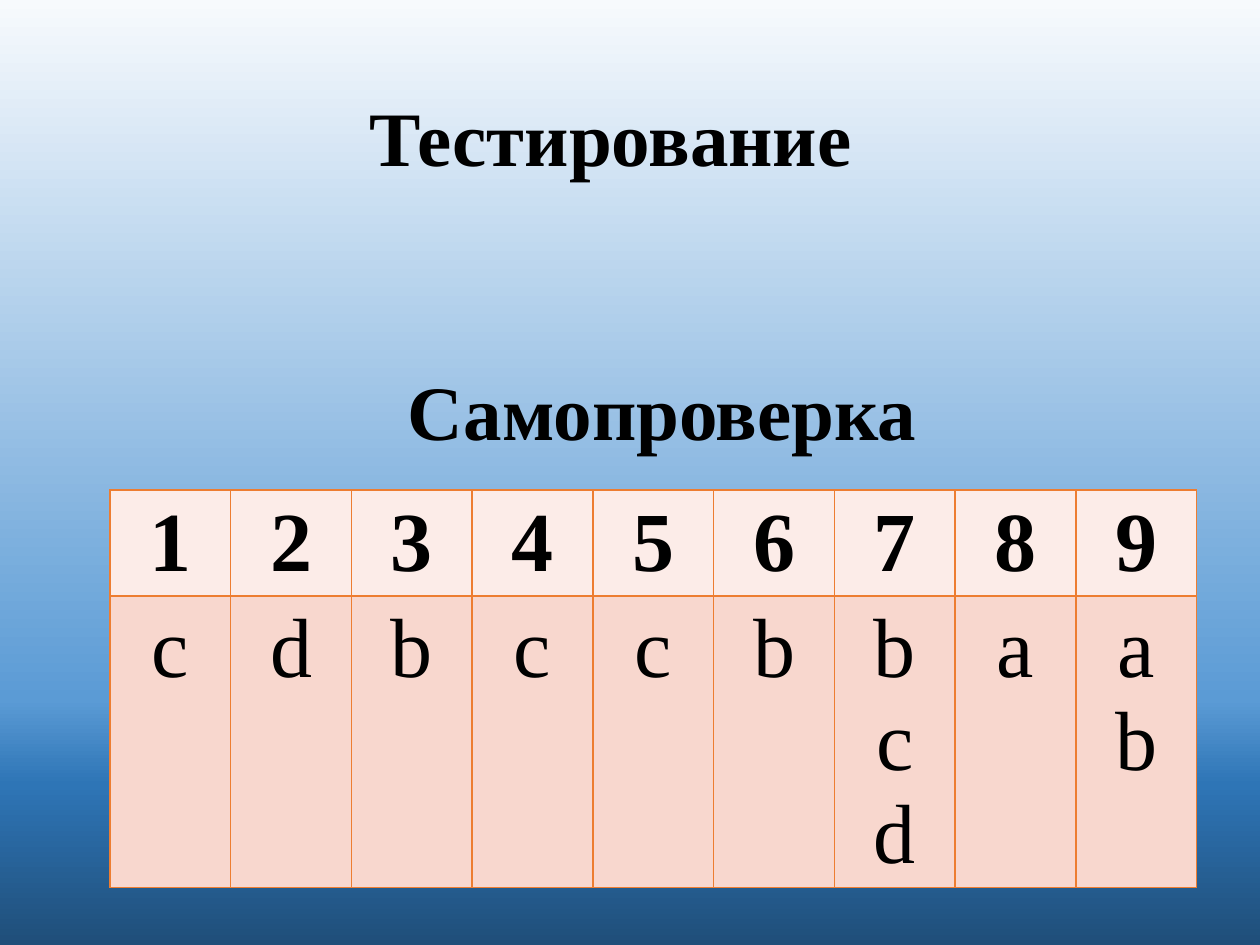
from lxml.etree import SubElement as Sub
from pptx import Presentation
from pptx.dml.color import RGBColor as Rgb
from pptx.enum.text import MSO_ANCHOR as Anchor, MSO_AUTO_SIZE as Fit, PP_ALIGN as Align
from pptx.oxml.ns import qn
from pptx.util import Pt

PX = 914400 // 126
FONT = "Times New Roman"
HEX = {"ink": "000000", "head": "FCECE8", "body": "F8D7CE", "edge": "ED7D31"}
SKY = [(0, "F7FAFD"), (74, "5B9BD5"), (83, "2E75B6"), (100, "1F4E79")]
KEY = {
    "1": "c", "2": "d", "3": "b", "4": "c", "5": "c",
    "6": "b", "7": "b\nc d", "8": "a", "9": "a b",
}


def emu(*box):
    return [n * PX for n in box]


def style(frame, size, bold):
    for para in frame.paragraphs:
        para.alignment = Align.CENTER
        for run in para.runs:
            font = run.font
            font.name, font.size, font.bold = FONT, Pt(size), bold
            font.color.rgb = Rgb.from_string(HEX["ink"])


def paint(slide):
    """Fill the background with the vertical sky gradient."""
    fill = slide.background.fill
    fill.gradient()
    fill.gradient_angle = 270
    stops = slide.element.find(".//" + qn("a:gsLst"))
    for old in list(stops):
        stops.remove(old)
    for pos, color in SKY:
        stop = Sub(stops, qn("a:gs"), pos=str(pos * 1000))
        Sub(stop, qn("a:srgbClr"), val=color)


def heading(shape, text, box, inset):
    """Set a bold heading; inset is the right margin in px."""
    shape.left, shape.top, shape.width, shape.height = emu(*box)
    frame = shape.text_frame
    frame.text = text
    frame.word_wrap = True
    frame.auto_size = Fit.NONE
    frame.vertical_anchor = Anchor.MIDDLE
    frame.margin_right = inset * PX
    frame.paragraphs[0].line_spacing = 0.9
    style(frame, 44, True)


def border(cell):
    props = cell._tc.get_or_add_tcPr()
    for i, side in enumerate(("lnL", "lnR", "lnT", "lnB")):
        line = props.makeelement(qn("a:" + side), {"w": str(Pt(1))})
        props.insert(i, line)
        Sub(Sub(line, qn("a:solidFill")), qn("a:srgbClr"), val=HEX["edge"])


def answers(slide, box, head):
    """Table of question numbers over answers; head is the top row's height."""
    x, y, w, h = box
    grid = slide.shapes.add_table(2, len(KEY), *emu(*box)).table
    for row, tall in zip(grid.rows, (head, h - head)):
        row.height = tall * PX
    for col in grid.columns:
        col.width = w * PX // len(KEY)
    for r, (tone, texts) in enumerate((("head", KEY.keys()), ("body", KEY.values()))):
        for c, text in enumerate(texts):
            cell = grid.cell(r, c)
            cell.text_frame.text = text
            style(cell.text_frame, 48, r == 0)
            cell.fill.solid()
            cell.fill.fore_color.rgb = Rgb.from_string(HEX[tone])
            border(cell)


def main():
    deck = Presentation()
    deck.slide_width, deck.slide_height = emu(1260, 945)
    slide = deck.slides.add_slide(deck.slide_layouts[5])
    paint(slide)
    heading(slide.shapes.title, "Самопроверка", (129, 324, 1086, 183), 32)
    answers(slide, (110, 490, 1087, 397), 106)
    top = slide.shapes.add_textbox(0, 0, 0, 0)
    heading(top, "Тестирование", (87, 50, 1086, 183), 51)
    deck.save("out.pptx")


if __name__ == "__main__":
    main()
